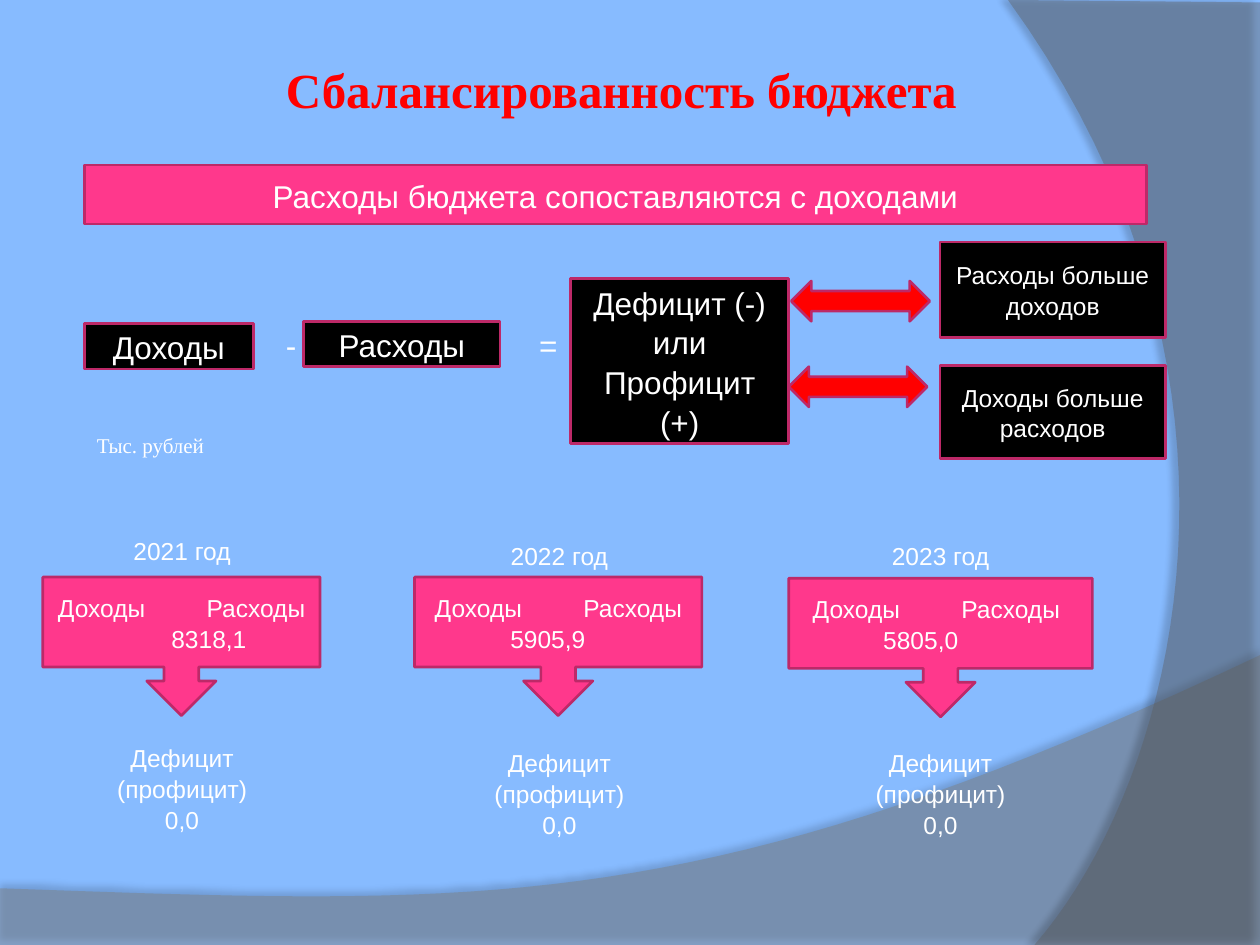
import lxml.etree
import pptx
import pptx.dml.color
import pptx.enum.shapes
import pptx.enum.text
import pptx.oxml.ns
import pptx.util

Inches = pptx.util.Inches
Pt = pptx.util.Pt
RGBColor = pptx.dml.color.RGBColor
SHAPES = pptx.enum.shapes.MSO_SHAPE
ALIGN = pptx.enum.text.PP_ALIGN
ANCHOR = pptx.enum.text.MSO_ANCHOR
qn = pptx.oxml.ns.qn

SKY = RGBColor(0x87, 0xBB, 0xFF)
PINK = RGBColor(0xFF, 0x38, 0x8C)
BORDER = RGBColor(0xBD, 0x29, 0x68)
BLACK = RGBColor(0, 0, 0)
WHITE = RGBColor(0xFF, 0xFF, 0xFF)
RED = RGBColor(0xFF, 0, 0)
WAVE_GRAY = RGBColor(0x7F, 0x7F, 0x7F)
SIDE_GRAY = RGBColor(0x5E, 0x5E, 0x5E)
SANS = "Arial"
SERIF = "Times New Roman"
LINE_SPACING = 1.05
COLUMN_GAP = 1.18


def add_child(parent, tag, **attributes):
    child = lxml.etree.SubElement(parent, qn(tag))
    for name, value in attributes.items():
        child.set(name, str(value))
    return child


def curve_points(start, control_1, control_2, end, steps=40):
    points = []
    for step in range(1, steps + 1):
        t = step / steps
        weights = ((1 - t) ** 3, 3 * t * (1 - t) ** 2, 3 * t ** 2 * (1 - t), t ** 3)
        corners = (start, control_1, control_2, end)
        points.append(tuple(sum(w * c[axis] for w, c in zip(weights, corners))
                            for axis in (0, 1)))
    return points


def add_backdrop(slide, corners, curve, color, opacity, shadow_opacity, distance, angle):
    outline = corners + curve_points(corners[-1], *curve)
    points = [(Inches(x), Inches(y)) for x, y in outline]
    builder = slide.shapes.build_freeform(*points[0])
    builder.add_line_segments(points[1:], close=True)
    shape = builder.convert_to_shape()
    shape.fill.solid()
    shape.fill.fore_color.rgb = color
    shape.line.fill.background()
    fill_color = shape._element.spPr.find(qn("a:solidFill"))[0]
    add_child(fill_color, "a:alpha", val=opacity * 1000)
    effects = add_child(shape._element.spPr, "a:effectLst")
    shadow = add_child(effects, "a:outerShdw", blurRad=Pt(4), dist=Pt(distance),
                       dir=angle * 60000, algn="ctr", rotWithShape=0)
    shadow_color = add_child(shadow, "a:srgbClr", val=BLACK)
    add_child(shadow_color, "a:alpha", val=shadow_opacity * 1000)


def format_text(frame, size, color=WHITE, font=SANS, align=ALIGN.CENTER, bold=False):
    for para in frame.paragraphs:
        para.alignment = align
        para.line_spacing = LINE_SPACING
        for span in para.runs:
            span.font.size = Pt(size)
            span.font.name = font
            span.font.color.rgb = color
            span.font.bold = bold


def add_label(slide, text, area, size, wrap=True, **style):
    box = slide.shapes.add_textbox(*map(Inches, area))
    box.text_frame.word_wrap = wrap
    box.text_frame.text = text
    format_text(box.text_frame, size, **style)
    return box


def add_block(slide, kind, area, fill, text="", size=18):
    block = slide.shapes.add_shape(kind, *map(Inches, area))
    block.shadow.inherit = False
    block.fill.solid()
    block.fill.fore_color.rgb = fill
    block.line.color.rgb = BORDER
    block.line.width = Pt(1.5)
    if text:
        frame = block.text_frame
        frame.word_wrap = True
        frame.vertical_anchor = ANCHOR.MIDDLE
        frame.text = text
        format_text(frame, size)
    return block


def add_year(slide, year, amount, label_area, callout_area, text_left, amount_indent):
    label = add_label(slide, f"{year} год\nДефицит\n(профицит)\n0,0", label_area, 14)
    label.text_frame.paragraphs[1].space_before = Pt(101)

    callout = add_block(slide, SHAPES.DOWN_ARROW_CALLOUT, callout_area, PINK,
                        f"Доходы\tРасходы\n{amount}", 14)
    frame = callout.text_frame
    frame.margin_left = Inches(text_left - callout_area[0])
    frame.margin_right = 0
    heading, total = frame.paragraphs
    heading.alignment = total.alignment = ALIGN.LEFT
    tabs = add_child(heading._p.get_or_add_pPr(), "a:tabLst")
    add_child(tabs, "a:tab", pos=Inches(COLUMN_GAP), algn="l")
    total._p.get_or_add_pPr().set("marL", str(Inches(amount_indent)))


def add_background(slide):
    slide.background.fill.solid()
    slide.background.fill.fore_color.rgb = SKY
    add_backdrop(slide, [(0, 7.05), (0, 7.5), (10, 7.5), (10, 5.2)],
                 [(5.59, 7.29), (3.91, 7.19), (0, 7.05)], WAVE_GRAY, 45, 35, 3.5, 270)
    add_backdrop(slide, [(10, 0.02), (10, 7.5), (8.21, 7.5)],
                 [(9.35, 6.19), (10.18, 3), (8, 0)], SIDE_GRAY, 40, 45, 4, 180)


def add_formula(slide):
    add_block(slide, SHAPES.RECTANGLE, (0.67, 1.31, 8.43, 0.47), PINK,
              "Расходы бюджета сопоставляются с доходами")
    add_block(slide, SHAPES.RECTANGLE, (0.67, 2.57, 1.34, 0.36), BLACK, "Доходы")
    add_label(slide, "-", (2.17, 2.52, 0.29, 0.4), 18, wrap=False, align=ALIGN.LEFT)
    add_block(slide, SHAPES.RECTANGLE, (2.41, 2.55, 1.56, 0.36), BLACK, "Расходы")
    add_label(slide, "=", (4.18, 2.52, 0.25, 0.4), 18, wrap=False, align=ALIGN.LEFT)
    process = SHAPES.FLOWCHART_PROCESS
    add_block(slide, process, (4.53, 2.21, 1.73, 1.31), BLACK,
              "Дефицит (-) или Профицит (+)")
    for left, top in ((6.28, 2.23), (6.26, 2.91)):
        add_block(slide, SHAPES.LEFT_RIGHT_ARROW, (left, top, 1.1, 0.32), RED)
    add_block(slide, process, (7.46, 1.92, 1.79, 0.76), BLACK, "Расходы больше доходов", 14)
    add_block(slide, process, (7.46, 2.9, 1.79, 0.74), BLACK, "Доходы больше расходов", 14)


def main():
    deck = pptx.Presentation()
    deck.slide_width = Inches(10)
    deck.slide_height = Inches(7.5)
    slide = deck.slides.add_slide(deck.slide_layouts[6])
    add_background(slide)
    title = add_label(slide, "Сбалансированность бюджета", (1.3, 0.36, 7.21, 0.59), 28,
                      color=RED, font=SERIF, bold=True)
    title.text_frame.margin_left = Inches(0.15)
    title.text_frame.margin_top = Inches(0.09)
    add_formula(slide)
    add_label(slide, "Тыс. рублей", (0.67, 3.37, 1.06, 0.3), 12, wrap=False,
              font=SERIF, align=ALIGN.LEFT)
    years = [
        (2021, "8318,1", (0.25, 4.19, 2.39, 2.46), (0.34, 4.58, 2.2, 1.1), 0.46, 0.9),
        (2022, "5905,9", (3.18, 4.23, 2.52, 2.46), (3.29, 4.58, 2.28, 1.1), 3.45, 0.6),
        (2023, "5805,0", (6.26, 4.23, 2.41, 2.46), (6.26, 4.59, 2.41, 1.1), 6.45, 0.56),
    ]
    for year in years:
        add_year(slide, *year)
    deck.save("out.pptx")


if __name__ == "__main__":
    main()
